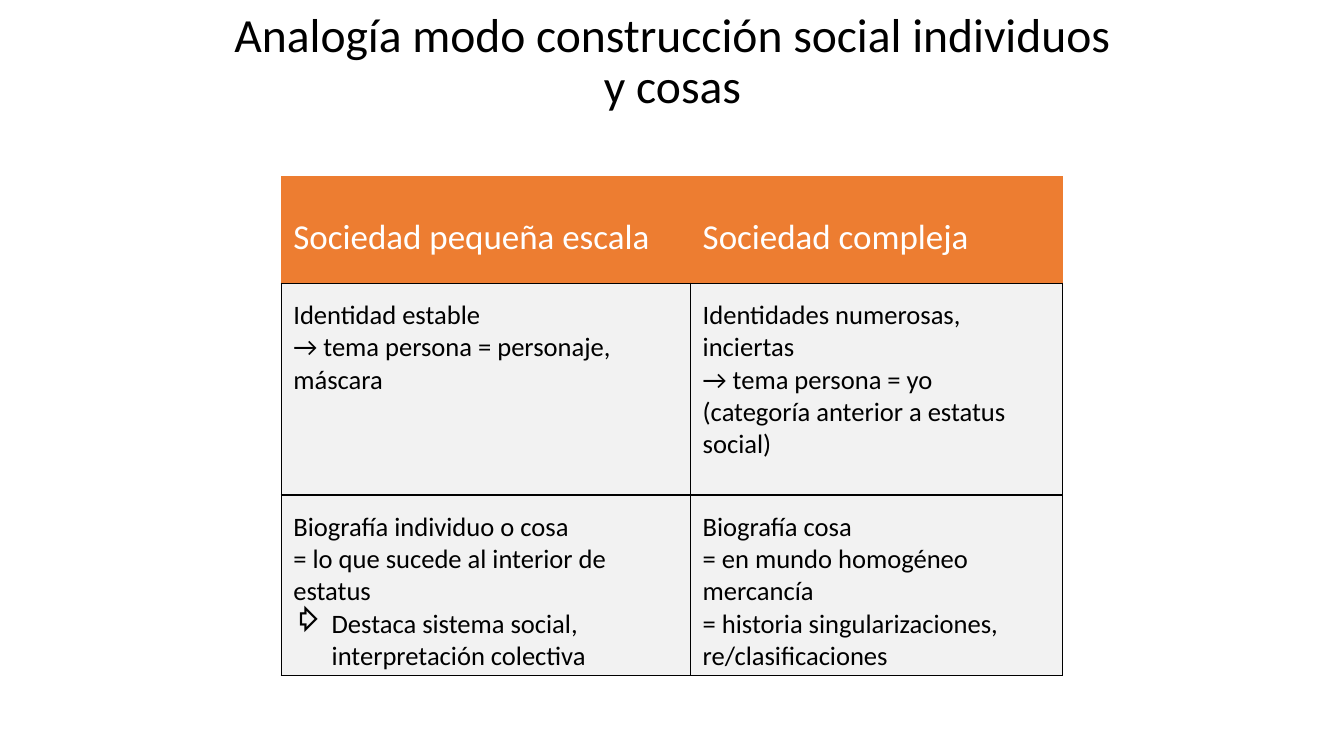
from lxml.etree import SubElement
from pptx import Presentation
from pptx.dml.color import RGBColor
from pptx.enum.text import MSO_ANCHOR, PP_ALIGN
from pptx.oxml import parse_xml
from pptx.oxml.ns import nsdecls, qn
from pptx.util import Pt

EMU_PER_PX = 9144  # 100 px to the inch
FONT = "Calibri"
COLORS = {
    "black": "000000",
    "white": "FFFFFF",
    "header": "ED7D31",
    "body": "F2F2F2",
}
BULLET = "⇨"
COLUMN_WIDTHS = [406, 369]
ROW_HEIGHTS = [106, 210, 179]
COMPARISON = [
    [["Sociedad pequeña escala"], ["Sociedad compleja"]],
    [
        ["Identidad estable", "→ tema persona = personaje, máscara"],
        ["Identidades numerosas, inciertas", "→ tema persona = yo",
         "(categoría anterior a estatus social)"],
    ],
    [
        ["Biografía individuo o cosa", "= lo que sucede al interior de estatus",
         BULLET + "Destaca sistema social, interpretación colectiva"],
        ["Biografía cosa", "= en mundo homogéneo mercancía",
         "= historia singularizaciones, re/clasificaciones"],
    ],
]


def px(length):
    return int(length * EMU_PER_PX)


def rgb(name):
    return RGBColor.from_string(COLORS[name])


def set_insets(target, left, top, right, bottom):
    target.margin_left, target.margin_top = px(left), px(top)
    target.margin_right, target.margin_bottom = px(right), px(bottom)


def add_bullet(paragraph, hang=38):
    properties = paragraph._p.get_or_add_pPr()
    properties.set("marL", str(px(hang)))
    properties.set("indent", str(-px(hang)))
    SubElement(properties, qn("a:buChar")).set("char", BULLET)


def write_text(frame, lines, size, color="black", align=PP_ALIGN.LEFT, spacing=None):
    """Write one paragraph per line; a leading bullet sign makes a list item."""
    for index, line in enumerate(lines):
        paragraph = frame.add_paragraph() if index else frame.paragraphs[0]
        paragraph.alignment = align
        paragraph.line_spacing = spacing
        if line.startswith(BULLET):
            add_bullet(paragraph)
        run = paragraph.add_run()
        run.text = line.removeprefix(BULLET)
        run.font.name, run.font.size, run.font.bold = FONT, Pt(size), False
        run.font.color.rgb = rgb(color)


def set_borders(cell, visible_sides):
    properties = cell._tc.get_or_add_tcPr()
    for index, side in enumerate("LRTB"):
        if side in visible_sides:
            paint = f'<a:solidFill><a:srgbClr val="{COLORS["black"]}"/></a:solidFill>'
        else:
            paint = "<a:noFill/>"
        border = f'<a:ln{side} {nsdecls("a")} w="{Pt(1)}">{paint}</a:ln{side}>'
        properties.insert(index, parse_xml(border))


def add_title(slide, text):
    title = slide.shapes.add_textbox(px(217), px(30), px(900), px(125)).text_frame
    title.word_wrap = True
    title.vertical_anchor = MSO_ANCHOR.MIDDLE
    set_insets(title, 10, 0, 10, 61)
    write_text(title, [text], 34, align=PP_ALIGN.CENTER, spacing=0.9)


def fill_cell(cell, lines, is_header):
    cell.fill.solid()
    cell.fill.fore_color.rgb = rgb("header" if is_header else "body")
    cell.vertical_anchor = MSO_ANCHOR.MIDDLE if is_header else MSO_ANCHOR.TOP
    set_insets(cell, 12, 16, 12, 0)
    set_borders(cell, "B" if is_header else "LRTB")
    write_text(cell.text_frame, lines, 25 if is_header else 19,
               "white" if is_header else "black")


def add_comparison(slide):
    table = slide.shapes.add_table(
        len(ROW_HEIGHTS), len(COLUMN_WIDTHS), px(279), px(175),
        px(sum(COLUMN_WIDTHS)), px(sum(ROW_HEIGHTS))).table
    table.horz_banding = False
    for column, width in zip(table.columns, COLUMN_WIDTHS):
        column.width = px(width)
    for row_index, (row, height) in enumerate(zip(table.rows, ROW_HEIGHTS)):
        row.height = px(height)
        for cell, lines in zip(row.cells, COMPARISON[row_index]):
            fill_cell(cell, lines, is_header=row_index == 0)


def main():
    presentation = Presentation()
    presentation.slide_width, presentation.slide_height = px(1333), px(750)
    slide = presentation.slides.add_slide(presentation.slide_layouts[6])
    add_title(slide, "Analogía modo construcción social individuos y cosas")
    add_comparison(slide)
    presentation.save("out.pptx")


if __name__ == "__main__":
    main()
